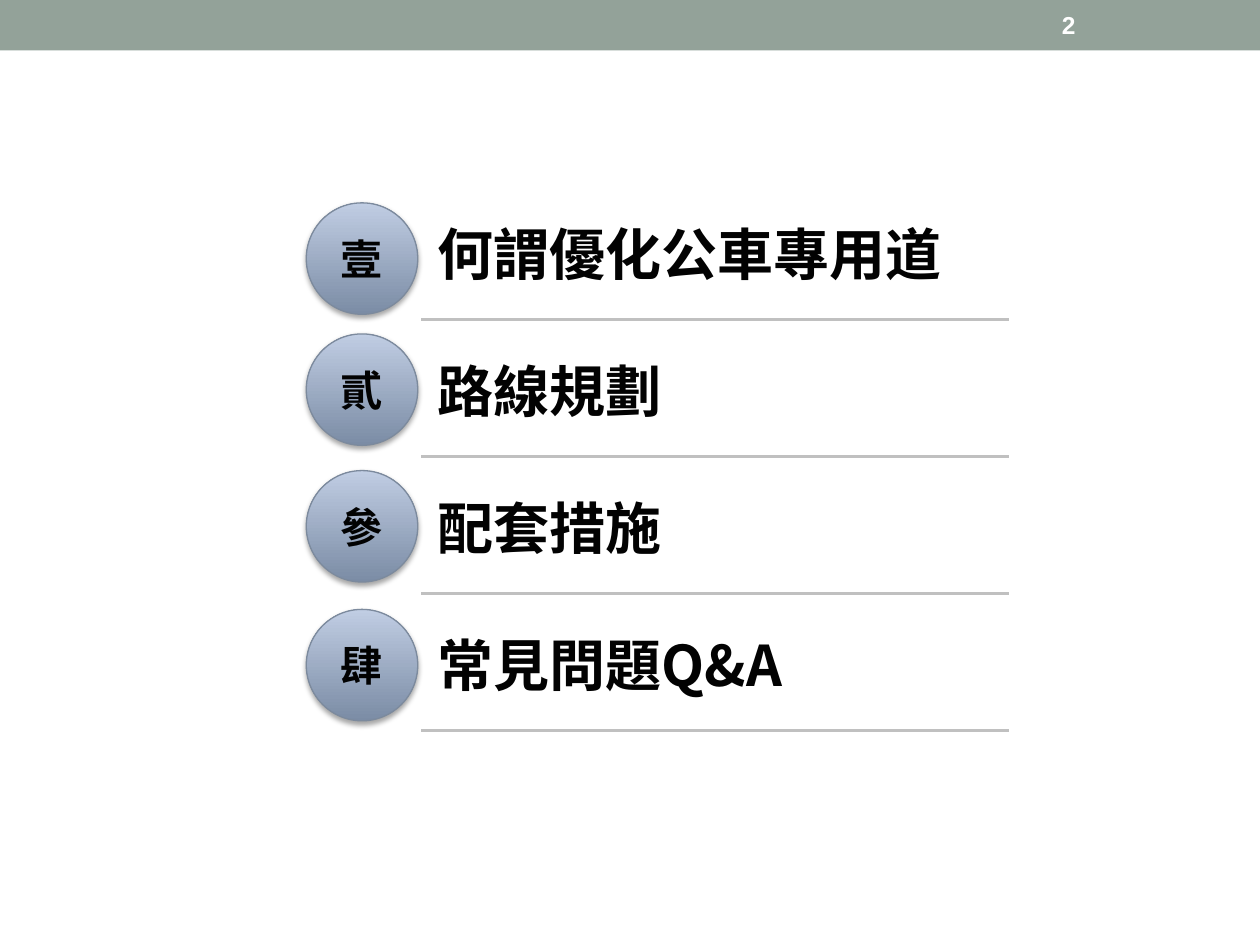
from lxml import etree
from pptx import Presentation
from pptx import util as u
from pptx.dml import color
from pptx.enum import shapes, text
from pptx.oxml import ns

Pt = u.Pt
CJK = "Noto Sans CJK SC"


def rgb(value):
    return color.RGBColor.from_string(value)


def write(frame, words, size, ink, face):
    frame.vertical_anchor = text.MSO_ANCHOR.MIDDLE
    para = frame.paragraphs[0]
    span = para.add_run()
    span.text = words
    span.font.size = Pt(size)
    span.font.bold = True
    span.font.color.rgb = rgb(ink)
    span.font.name = face
    east = etree.SubElement(span._r.get_or_add_rPr(), ns.qn("a:ea"))
    east.set("typeface", face)
    return para


deck = Presentation()
deck.slide_width, deck.slide_height = Pt(720), Pt(540)
page = deck.slides.add_slide(deck.slide_layouts[6])

band = page.shapes.add_shape(shapes.MSO_SHAPE.RECTANGLE, 0, 0, Pt(720), Pt(28.8))
band.shadow.inherit = False
band.fill.solid()
band.fill.fore_color.rgb = rgb("93A299")
band.line.fill.background()

number = page.shapes.add_textbox(Pt(599.76), Pt(1.44), Pt(84.24), Pt(25.92))
number.text_frame.word_wrap = True
write(number.text_frame, "2", 14, "FFFFFF", "Arial")

chapters = [
    ("壹", "何謂優化公車專用道", 115.9),
    ("貳", "路線規劃", 190.8),
    ("參", "配套措施", 268.9),
    ("肆", "常見問題Q&A", 348.2),
]

row_height = 78.3
frame = page.shapes.add_table(
    len(chapters), 1, Pt(241.2), Pt(104.4), Pt(334.8), Pt(row_height * len(chapters)))
table = frame.table
table.first_row = False
table.horz_banding = False

for row, (numeral, heading, top) in enumerate(chapters):
    table.rows[row].height = Pt(row_height)
    cell = table.cell(row, 0)
    cell.fill.background()
    cell.margin_left = cell.margin_right = Pt(8.64)
    cell.margin_top = cell.margin_bottom = Pt(4.32)
    write(cell.text_frame, heading, 32, "020202", CJK)
    cell.vertical_anchor = text.MSO_ANCHOR.MIDDLE
    rule = etree.Element(ns.qn("a:lnB"), w=str(Pt(2.25)))
    paint = etree.SubElement(rule, ns.qn("a:solidFill"))
    etree.SubElement(paint, ns.qn("a:srgbClr"), val="C0C0C0")
    cell._tc.get_or_add_tcPr().insert(0, rule)

    disc = page.shapes.add_shape(
        shapes.MSO_SHAPE.OVAL, Pt(175), Pt(top), Pt(63.7), Pt(63.7))
    disc.fill.gradient()
    disc.fill.gradient_angle = 90
    for stop, shade in zip(disc.fill.gradient_stops, ("7B8CA5", "C0CDE3")):
        stop.color.rgb = rgb(shade)
    disc.line.color.rgb = rgb("7C8A9D")
    disc.line.width = Pt(0.75)
    disc.shadow.inherit = False
    effects = disc._element.spPr.find(ns.qn("a:effectLst"))
    shadow = etree.SubElement(
        effects, ns.qn("a:outerShdw"), blurRad=str(Pt(3.1)), dist=str(Pt(1.8)),
        dir="5400000", rotWithShape="0")
    tint = etree.SubElement(shadow, ns.qn("a:srgbClr"), val="000000")
    etree.SubElement(tint, ns.qn("a:alpha"), val="35000")
    para = write(disc.text_frame, numeral, 24, "020202", CJK)
    para.alignment = text.PP_ALIGN.CENTER

deck.save("out.pptx")
